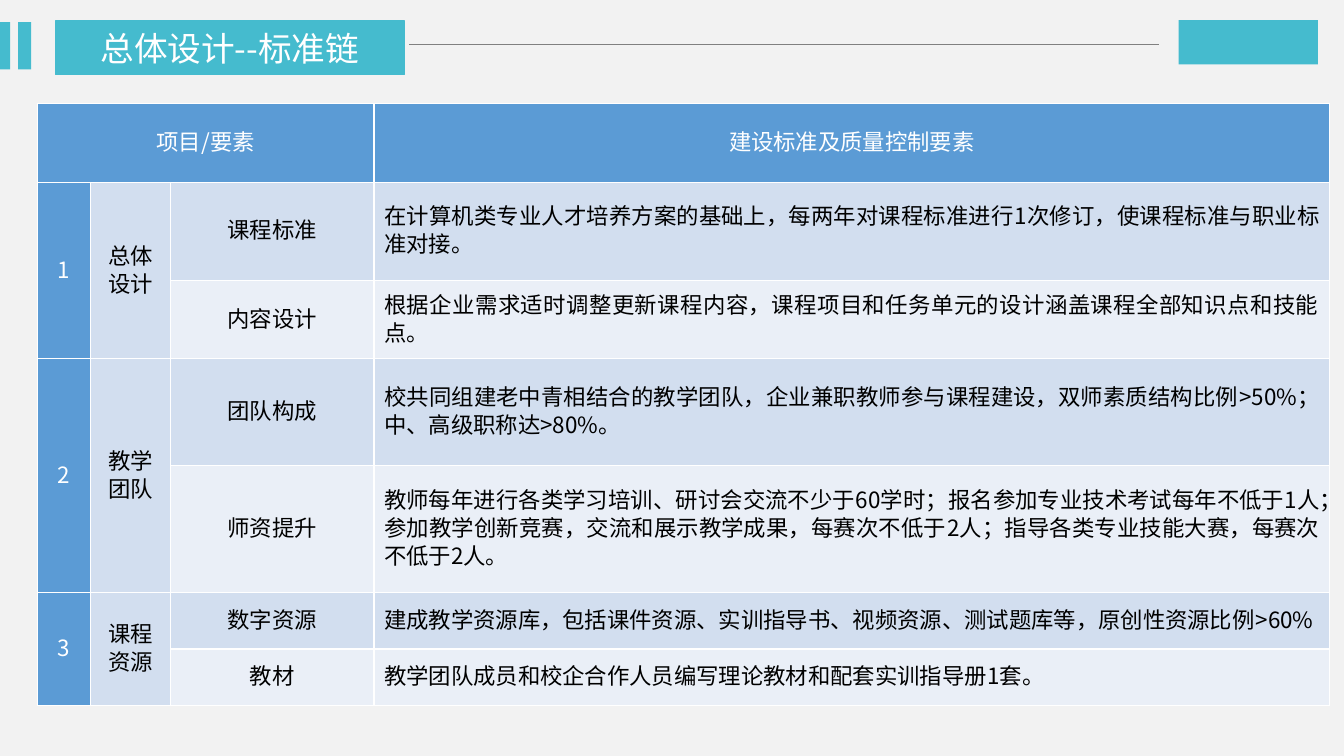
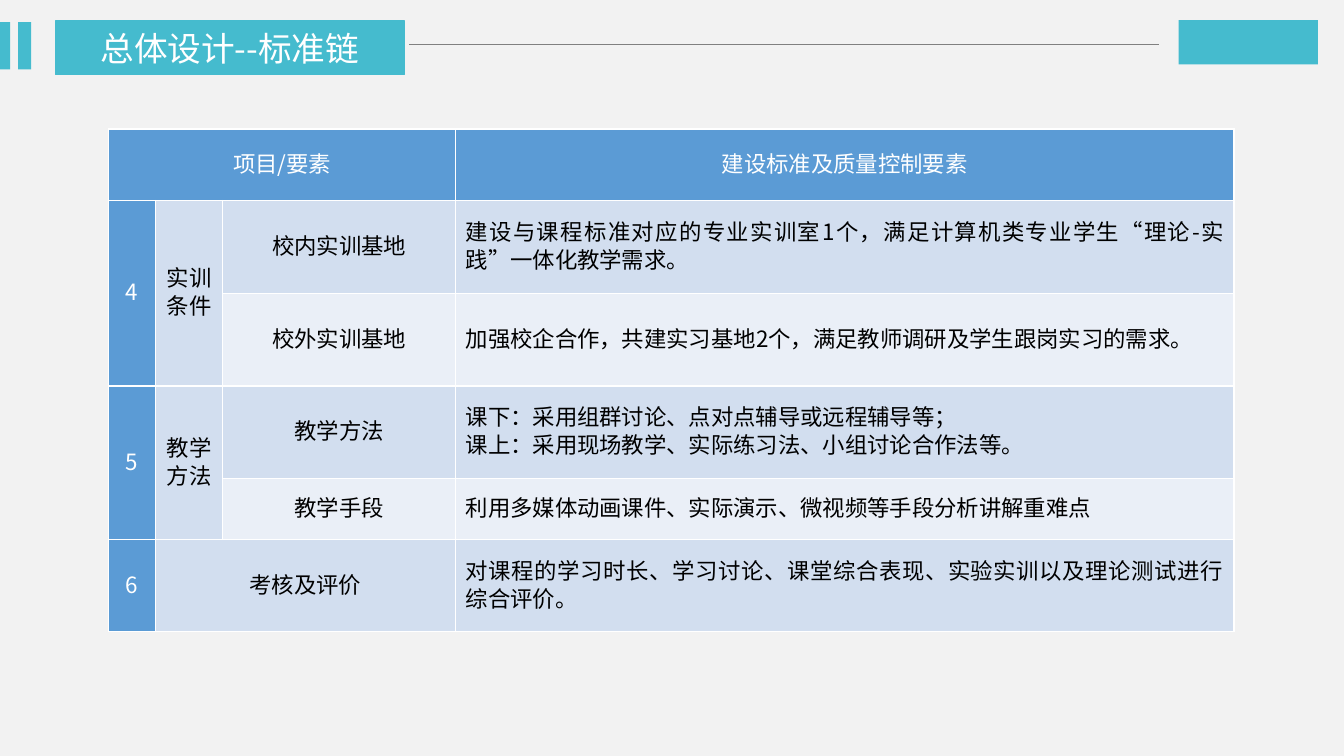
from lxml import etree
from pptx import Presentation
from pptx import util as u
from pptx.dml.color import RGBColor
from pptx.enum import shapes, text
from pptx.oxml import ns

COLORS = {
    "page": "F2F2F2", "teal": "45BBCE", "rule": "808080", "head": "5B9BD5",
    "dark": "D2DEEF", "light": "EAEFF7", "white": "FFFFFF", "black": "000000",
}
FONT = "Noto Sans CJK SC"
TITLE = "总体设计--标准链"
HEADERS = ("项目/要素", "建设标准及质量控制要素")
CENTER = text.PP_ALIGN.CENTER
JUSTIFY = text.PP_ALIGN.JUSTIFY

SLIDES = [
    {
        "box": (0.37, 1.03),
        "cols": (0.53, 0.79, 2.02, 9.48),
        "rows": (0.78, 0.97, 0.78, 1.06, 1.26, 0.56, 0.56),
        "groups": [
            ("1", "总体设计", [
                ("课程标准", ["在计算机类专业人才培养方案的基础上，每两年对课程标准进行1次修订，使课程标准与职业标准对接。"]),
                ("内容设计", ["根据企业需求适时调整更新课程内容，课程项目和任务单元的设计涵盖课程全部知识点和技能点。"]),
            ]),
            ("2", "教学团队", [
                ("团队构成", ["校共同组建老中青相结合的教学团队，企业兼职教师参与课程建设，双师素质结构比例>50%；中、高级职称达>80%。"]),
                ("师资提升", ["教师每年进行各类学习培训、研讨会交流不少于60学时；报名参加专业技术考试每年不低于1人；参加教学创新竞赛，交流和展示教学成果，每赛次不低于2人；指导各类专业技能大赛，每赛次不低于2人。"]),
            ]),
            ("3", "课程资源", [
                ("数字资源", ["建成教学资源库，包括课件资源、实训指导书、视频资源、测试题库等，原创性资源比例>60%"]),
                ("教材", ["教学团队成员和校企合作人员编写理论教材和配套实训指导册1套。"]),
            ]),
        ],
    },
    {
        "box": (1.08, 1.28),
        "cols": (0.46, 0.67, 2.31, 7.72),
        "rows": (0.71, 0.92, 0.92, 0.92, 0.6, 0.92),
        "groups": [
            ("4", "实训条件", [
                ("校内实训基地", ["建设与课程标准对应的专业实训室1个，满足计算机类专业学生“理论-实践”一体化教学需求。"]),
                ("校外实训基地", ["加强校企合作，共建实习基地2个，满足教师调研及学生跟岗实习的需求。"]),
            ]),
            ("5", "教学方法", [
                ("教学方法", ["课下：采用组群讨论、点对点辅导或远程辅导等；",
                          "课上：采用现场教学、实际练习法、小组讨论合作法等。"]),
                ("教学手段", ["利用多媒体动画课件、实际演示、微视频等手段分析讲解重难点"]),
            ]),
            ("6", "考核及评价", [
                (None, ["对课程的学习时长、学习讨论、课堂综合表现、实验实训以及理论测试进行综合评价。"]),
            ]),
        ],
    },
]


def rgb(name):
    return RGBColor.from_string(COLORS[name])


def paint(target, name):
    target.fill.solid()
    target.fill.fore_color.rgb = rgb(name)


def write(p, content, size, color, align):
    p.alignment = align
    r = p.add_run()
    r.text = content
    r.font.size = u.Pt(size)
    r.font.bold = False
    r.font.name = FONT
    r.font.color.rgb = rgb(color)
    etree.SubElement(r.font._element, ns.qn("a:ea"), typeface=FONT)


def add_block(s, x, y, w, h):
    sp = s.shapes.add_shape(shapes.MSO_SHAPE.RECTANGLE, *map(u.Inches, (x, y, w, h)))
    sp.shadow.inherit = False
    paint(sp, "teal")
    sp.line.fill.background()


def add_title(s, x, y, w, h):
    sp = s.shapes.title
    sp.left, sp.top, sp.width, sp.height = map(u.Inches, (x, y, w, h))
    geom = etree.SubElement(sp._element.spPr, ns.qn("a:prstGeom"), prst="roundRect")
    etree.SubElement(geom, ns.qn("a:avLst"))
    paint(sp, "teal")
    sp.line.color.rgb = rgb("teal")
    sp.line.width = u.Pt(1)
    tf = sp.text_frame
    tf.auto_size = text.MSO_AUTO_SIZE.NONE
    tf.vertical_anchor = text.MSO_ANCHOR.MIDDLE
    write(tf.paragraphs[0], TITLE, 24, "white", CENTER)


def add_header(s, y):
    add_block(s, 0, y + 0.02, 0.1, 0.47)
    add_block(s, 0.18, y + 0.02, 0.13, 0.47)
    add_block(s, 11.69, y, 1.38, 0.44)
    mid = u.Inches(y + 0.24)
    rule = s.shapes.add_connector(
        shapes.MSO_CONNECTOR.STRAIGHT, u.Inches(4.06), mid, u.Inches(11.5), mid)
    rule.line.color.rgb = rgb("rule")
    rule.line.width = u.Pt(0.5)
    etree.SubElement(rule._element.spPr, ns.qn("a:effectLst"))
    add_title(s, 0.55, y + 0.01, 3.46, 0.53)


def style_cell(cell, fill):
    tcPr = cell._tc.get_or_add_tcPr()
    for side in ("lnL", "lnR", "lnT", "lnB"):
        ln = etree.SubElement(tcPr, ns.qn("a:" + side), w=str(u.Pt(1)))
        solid = etree.SubElement(ln, ns.qn("a:solidFill"))
        etree.SubElement(solid, ns.qn("a:srgbClr"), val=COLORS["white"])
    paint(cell, fill)
    cell.vertical_anchor = text.MSO_ANCHOR.MIDDLE
    cell.margin_left = cell.margin_right = u.Inches(0.1)
    cell.margin_top = cell.margin_bottom = 0


def fill_cell(cell, paras, color="black", align=CENTER):
    tf = cell.text_frame
    for i, content in enumerate(paras):
        p = tf.add_paragraph() if i else tf.paragraphs[0]
        p.line_spacing = u.Pt(20)
        write(p, content, 16, color, align)


def add_standards(s, box, cols, rows, groups):
    x, y = box
    tbl = s.shapes.add_table(
        len(rows), len(cols), *map(u.Inches, (x, y, sum(cols), sum(rows)))).table
    for col, w in zip(tbl.columns, cols):
        col.width = u.Inches(w)
    for row, h in zip(tbl.rows, rows):
        row.height = u.Inches(h)
    for i in range(len(rows)):
        band = "dark" if i % 2 else "light"
        fills = ("head", "dark", band, band) if i else ("head",) * 4
        for j, fill in enumerate(fills):
            style_cell(tbl.cell(i, j), fill)

    tbl.cell(0, 0).merge(tbl.cell(0, 2))
    for j, label in zip((0, 3), HEADERS):
        fill_cell(tbl.cell(0, j), [label], "white")

    top = 1
    for number, name, items in groups:
        last = top + len(items) - 1
        name_end = 1 if items[0][0] else 2
        if last > top:
            tbl.cell(top, 0).merge(tbl.cell(last, 0))
        tbl.cell(top, 1).merge(tbl.cell(last, name_end))
        fill_cell(tbl.cell(top, 0), [number], "white")
        fill_cell(tbl.cell(top, 1), [name])
        for i, (item, paras) in enumerate(items, top):
            if item:
                fill_cell(tbl.cell(i, 2), [item])
            fill_cell(tbl.cell(i, 3), paras, align=JUSTIFY)
        top = last + 1


def main():
    prs = Presentation()
    prs.slide_width, prs.slide_height = u.Inches(13.33), u.Inches(7.5)
    paint(prs.slide_master.background, "page")
    for content in SLIDES:
        s = prs.slides.add_slide(prs.slide_layouts[5])
        add_header(s, 0.2)
        add_standards(s, **content)
    prs.save("out.pptx")


if __name__ == "__main__":
    main()
